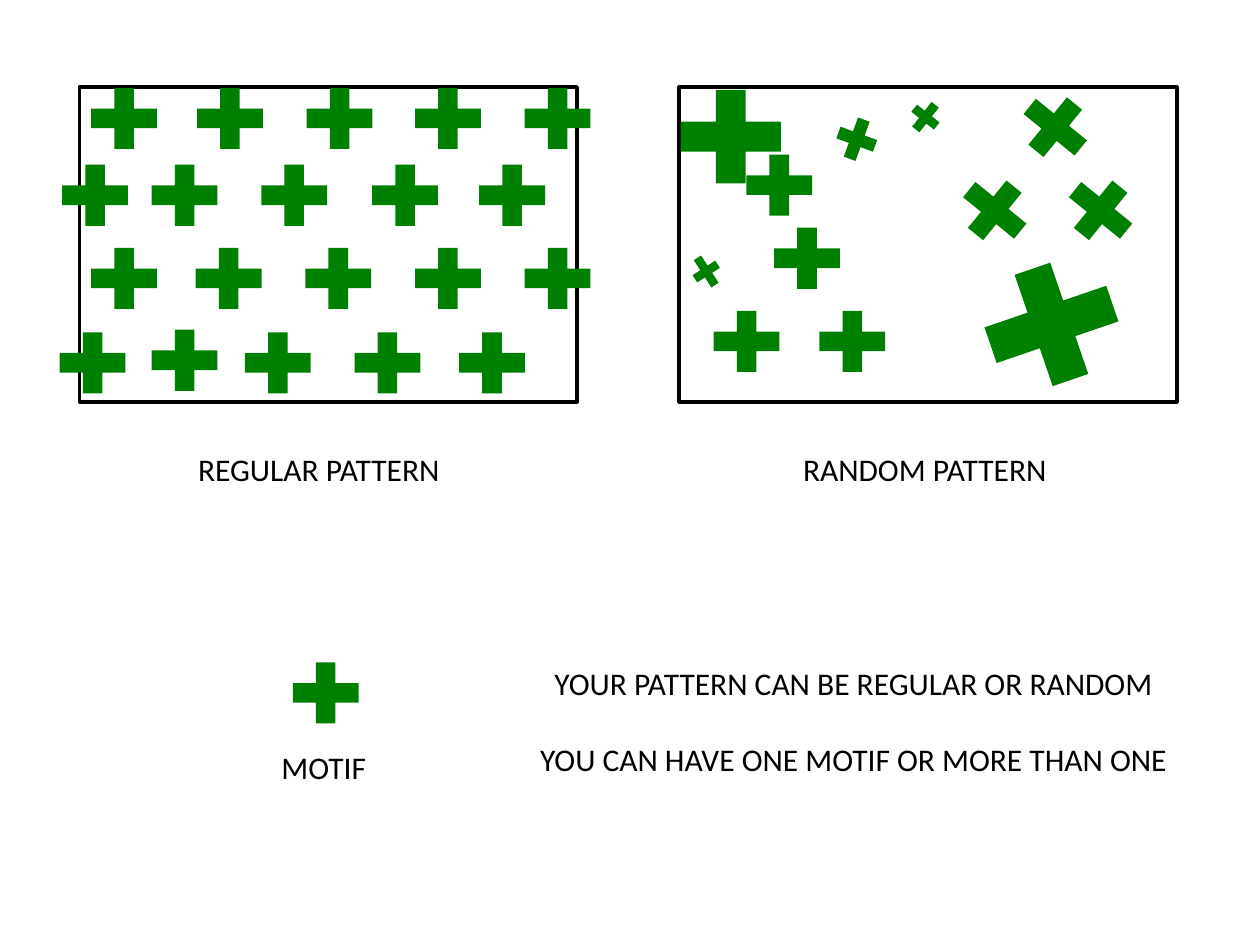
from dataclasses import dataclass

from pptx import Presentation
from pptx.dml.color import RGBColor
from pptx.enum.shapes import MSO_SHAPE as Shape
from pptx.enum.text import MSO_AUTO_SIZE as AutoSize, PP_ALIGN as Align
from pptx.util import Inches, Pt

GREEN, BLACK, WHITE = "008000", "000000", "FFFFFF"
FONT = "Calibri"


@dataclass(frozen=True)
class Motif:
    left: float
    top: float
    width: float = 0.71
    height: float = 0.66
    rotation: float = 0


@dataclass(frozen=True)
class Caption:
    left: float
    top: float
    width: float
    height: float
    lines: tuple[str, ...]


FRAME_LEFTS = (0.63, 5.39)

# Row top -> left edges; alternate rows are staggered
REGULAR_ROWS = {
    0.61: (0.63, 1.47, 2.34, 3.2, 4.07),
    1.22: (0.4, 1.11, 1.98, 2.86, 3.71),
    1.88: (0.63, 1.46, 2.33, 3.2, 4.07),
    2.53: (1.11,),
    2.55: (0.38, 1.85, 2.72, 3.55),
}
REGULAR_MOTIFS = [Motif(left, top) for top, lefts in REGULAR_ROWS.items() for left in lefts]

RANDOM_MOTIFS = [
    Motif(6.05, 1.72),
    Motif(5.57, 2.38),
    Motif(6.41, 2.38),
    Motif(8.02, 0.68, rotation=39.1),
    Motif(7.54, 1.34, rotation=39.1),
    Motif(8.38, 1.34, rotation=39.1),
    Motif(7.65, 1.94, 1.39, 1.27, 341.1),
    Motif(5.26, 0.58, 1.08, 1.01),
    Motif(5.83, 1.14),
    Motif(6.59, 0.88, 0.42, 0.45, 20),
    Motif(5.46, 1.98, 0.29, 0.35, 327.2),
    Motif(7.19, 0.76, 0.31, 0.34, 38.3),
]
SINGLE_MOTIF = Motif(2.23, 5.17)

CAPTIONS = [
    Caption(1.34, 3.52, 2.38, 0.4, ("REGULAR PATTERN",)),
    Caption(6.05, 3.52, 2.58, 0.4, ("RANDOM PATTERN",)),
    Caption(1.11, 5.89, 2.92, 0.4, ("MOTIF",)),
    Caption(4.03, 5.22, 5.49, 1.01, (
        "YOUR PATTERN CAN BE REGULAR OR RANDOM",
        "YOU CAN HAVE ONE MOTIF OR MORE THAN ONE",
    )),
]


def color(hex_value: str) -> RGBColor:
    return RGBColor.from_string(hex_value)


def add_frame(slide, left: float) -> None:
    sp = slide.shapes.add_shape(
        Shape.RECTANGLE, Inches(left), Inches(0.69), Inches(3.95), Inches(2.5))
    sp.shadow.inherit = False
    sp.fill.solid()
    sp.fill.fore_color.rgb = color(WHITE)
    sp.line.color.rgb = color(BLACK)
    sp.line.width = Pt(2)


def add_motif(slide, motif: Motif) -> None:
    sp = slide.shapes.add_shape(
        Shape.MATH_PLUS, Inches(motif.left), Inches(motif.top),
        Inches(motif.width), Inches(motif.height))
    sp.rotation = motif.rotation
    sp.shadow.inherit = False
    sp.fill.solid()
    sp.fill.fore_color.rgb = color(GREEN)
    sp.line.fill.background()


def add_caption(slide, caption: Caption) -> None:
    box = slide.shapes.add_textbox(
        Inches(caption.left), Inches(caption.top),
        Inches(caption.width), Inches(caption.height))
    tf = box.text_frame
    tf.word_wrap = True
    tf.auto_size = AutoSize.SHAPE_TO_FIT_TEXT
    for i, line in enumerate(caption.lines):
        p = tf.add_paragraph() if i else tf.paragraphs[0]
        p.text = line
        p.alignment = Align.CENTER
        p.space_before = Pt(22 if i else 0)
        p.font.name = FONT
        p.font.size = Pt(18)
        p.font.color.rgb = color(BLACK)


def main() -> None:
    prs = Presentation()
    prs.slide_width, prs.slide_height = Inches(10), Inches(7.5)
    slide = prs.slides.add_slide(prs.slide_layouts[6])
    for left in FRAME_LEFTS:
        add_frame(slide, left)
    for motif in (*REGULAR_MOTIFS, *RANDOM_MOTIFS, SINGLE_MOTIF):
        add_motif(slide, motif)
    for caption in CAPTIONS:
        add_caption(slide, caption)
    prs.save("out.pptx")


if __name__ == "__main__":
    main()
